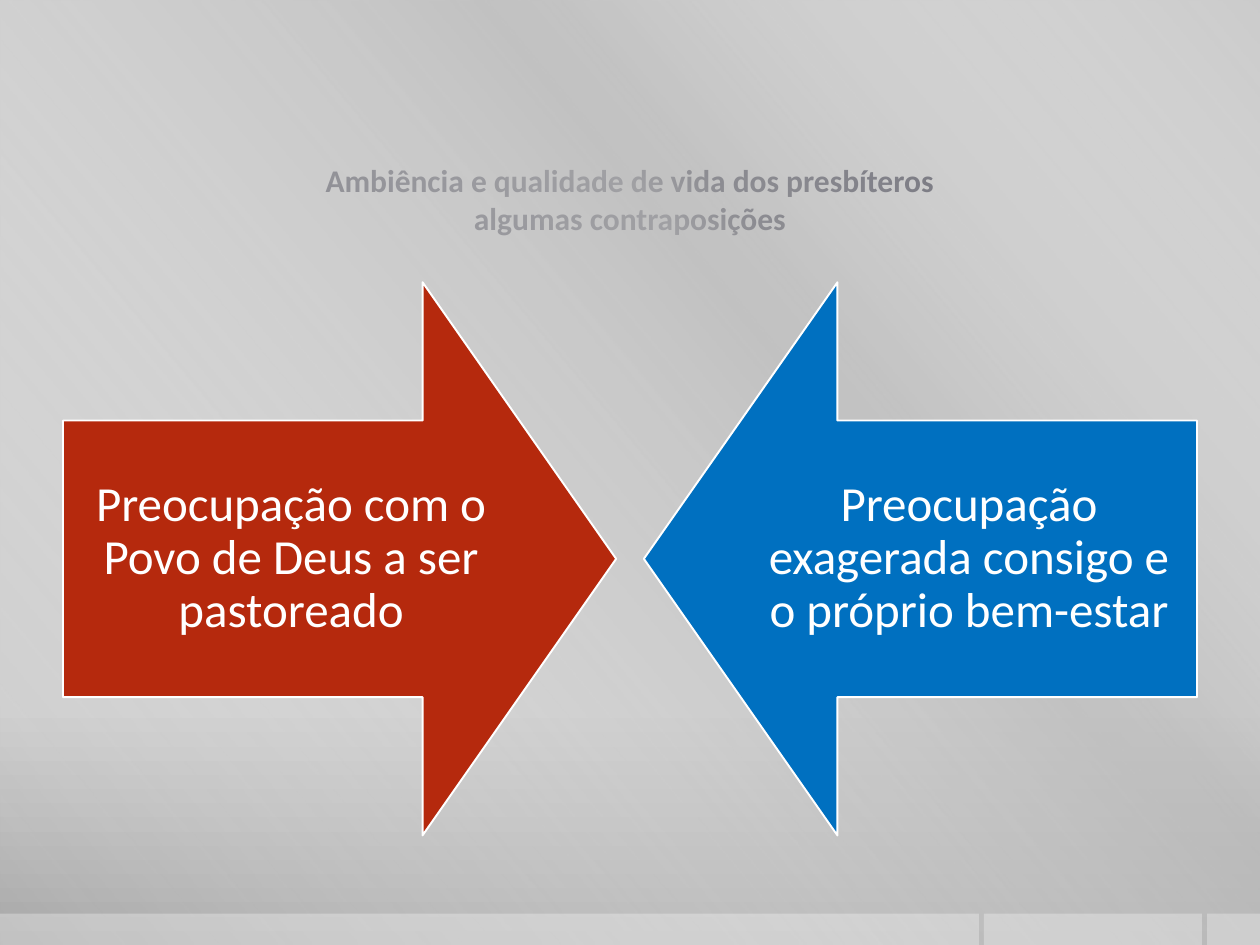
import lxml.etree
import pptx
import pptx.dml.color
import pptx.enum.shapes
import pptx.enum.text
import pptx.oxml.ns
import pptx.util

Inches = pptx.util.Inches
SHAPE = pptx.enum.shapes.MSO_SHAPE
qn = pptx.oxml.ns.qn

STRIP_OPACITY = 30
ARROW_SIZE = 4.39
ARROW_TOP = 2.24
LABEL_W, LABEL_H = 3.62, 2.19


def rgb(hex_color):
    return pptx.dml.color.RGBColor.from_string(hex_color)


def set_opacity(color, percent):
    alpha = lxml.etree.SubElement(color, qn("a:alpha"))
    alpha.set("val", str(percent * 1000))


def set_gradient(props, stops, angle):
    """Replace the solid fill in props by a linear gradient."""
    grad = lxml.etree.Element(qn("a:gradFill"), rotWithShape="1")
    stop_list = lxml.etree.SubElement(grad, qn("a:gsLst"))
    for position, hex_color, opacity in stops:
        stop = lxml.etree.SubElement(stop_list, qn("a:gs"), pos=str(position * 1000))
        color = lxml.etree.SubElement(stop, qn("a:srgbClr"), val=hex_color)
        if opacity < 100:
            set_opacity(color, opacity)
    lxml.etree.SubElement(grad, qn("a:lin"), ang=str(angle * 60000), scaled="0")
    props.replace(props.find(qn("a:solidFill")), grad)


def add_shape(s, kind, left, top, width, height, fill):
    sp = s.shapes.add_shape(kind, Inches(left), Inches(top), Inches(width), Inches(height))
    sp.shadow.inherit = False
    sp.fill.solid()
    sp.fill.fore_color.rgb = rgb(fill)
    sp.line.fill.background()
    return sp


def format_text(tf, text, size, color, margin_x, margin_y, bold=False):
    tf.word_wrap = True
    tf.auto_size = pptx.enum.text.MSO_AUTO_SIZE.NONE
    tf.vertical_anchor = pptx.enum.text.MSO_ANCHOR.MIDDLE
    tf.margin_left = tf.margin_right = Inches(margin_x)
    tf.margin_top = tf.margin_bottom = Inches(margin_y)
    p = tf.paragraphs[0]
    p.text = text
    p.alignment = pptx.enum.text.PP_ALIGN.CENTER
    p.font.name = "Calibri"
    p.font.size = pptx.util.Pt(size)
    p.font.bold = bold
    p.font.color.rgb = rgb(color)
    return p


def add_backdrop(s):
    s.background.fill.solid()
    set_gradient(s.element.find(".//" + qn("p:bgPr")),
                 [(0, "CBCBCB", 100), (76, "C8C8C8", 100), (100, "A7A7A7", 100)], 90)
    # Diagonal sheen
    sheen = add_shape(s, SHAPE.RECTANGLE, 0, 0, 10, 7.5, "FFFFFF")
    set_gradient(sheen.element.spPr,
                 [(0, "FFFFFF", 0), (34, "BFBFBF", 61),
                  (38, "BFBFBF", 76), (100, "FFFFFF", 0)], 140)
    # Footer strips
    for left, width in ((9.58, 0.42), (7.81, 1.73), (0, 7.77)):
        strip = add_shape(s, SHAPE.RECTANGLE, left, 7.25, width, 0.25, "FFFFFF")
        set_opacity(strip.element.spPr.find(".//" + qn("a:srgbClr")), STRIP_OPACITY)


def add_title(s, text):
    title = s.shapes.title
    title.left, title.top = Inches(0.5), Inches(1.08)
    title.width, title.height = Inches(9), Inches(1)
    format_text(title.text_frame, text, 18, "3F3F4D", 0, 0.05, bold=True)


def add_arrow(s, left, rotation, fill, label_left, text):
    arrow = add_shape(s, SHAPE.DOWN_ARROW, left, ARROW_TOP, ARROW_SIZE, ARROW_SIZE, fill)
    arrow.rotation = rotation
    arrow.adjustments[0] = 0.5
    arrow.adjustments[1] = 0.35
    arrow.line.color.rgb = rgb("FFFFFF")
    arrow.line.width = pptx.util.Pt(1.1)
    # Label over the arrow's shaft
    label_top = ARROW_TOP + (ARROW_SIZE - LABEL_H) / 2
    label = s.shapes.add_textbox(Inches(label_left), Inches(label_top),
                                 Inches(LABEL_W), Inches(LABEL_H))
    p = format_text(label.text_frame, text, 28, "FFFFFF", 0.22, 0.22)
    p.line_spacing = 0.9


def main():
    prs = pptx.Presentation()
    prs.slide_width, prs.slide_height = Inches(10), Inches(7.5)
    s = prs.slides.add_slide(prs.slide_layouts[5])
    add_backdrop(s)
    add_title(s, "Ambiência e qualidade de vida dos presbíteros\valgumas contraposições")
    # Opposing arrows
    add_arrow(s, 0.5, 270, "B5290D", 0.5,
              "Preocupação com o Povo de Deus a ser pastoreado")
    add_arrow(s, 9.5 - ARROW_SIZE, 90, "0070C0", 9.5 - LABEL_W,
              "Preocupação exagerada consigo e o próprio bem-estar")
    prs.save("out.pptx")


if __name__ == "__main__":
    main()
